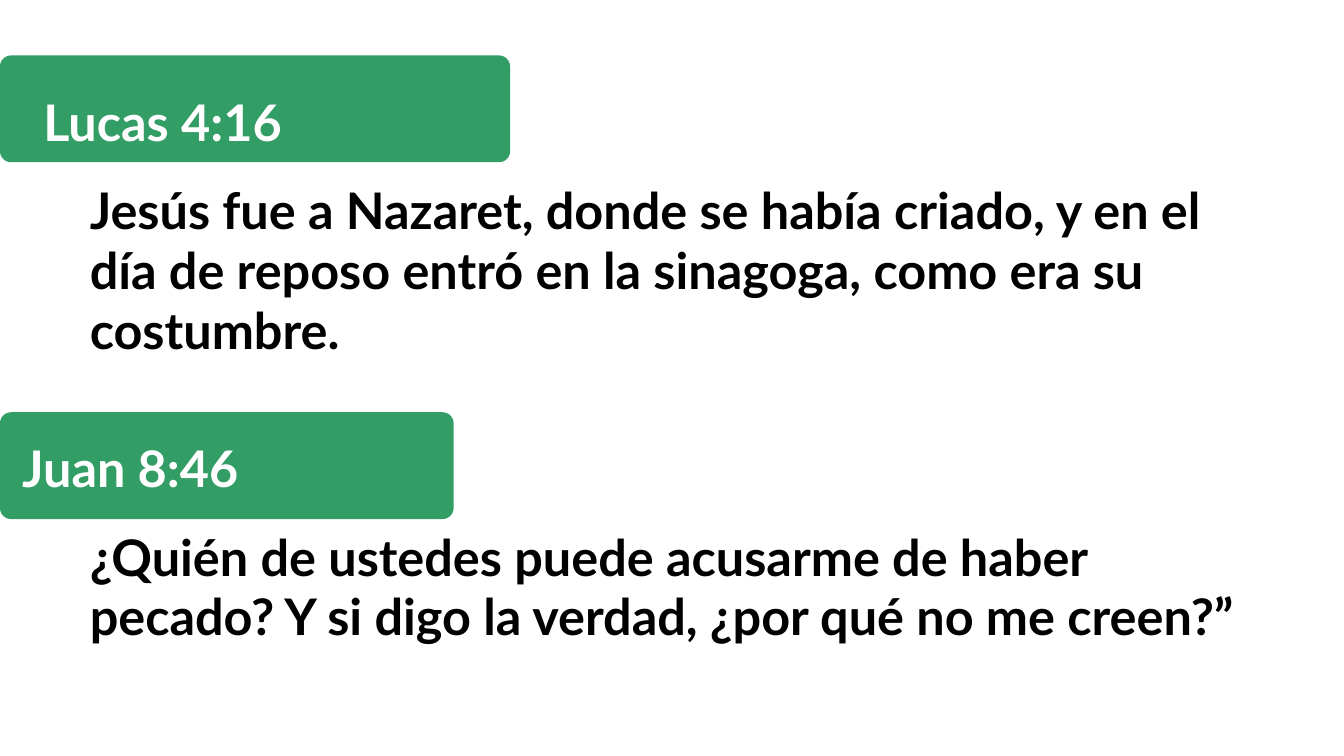
"""Build a slide with two Bible verses under green reference banners."""
from dataclasses import dataclass

import pptx
import pptx.dml.color
import pptx.enum.shapes
import pptx.enum.text
import pptx.oxml.ns
import pptx.util
from lxml import etree
from pptx.util import Inches


@dataclass(frozen=True)
class Theme:
    font: str = "Lato"
    size: int = 36
    banner: str = "008540"
    banner_opacity: int = 80
    reference: str = "FFFFFF"
    verse: str = "000000"


THEME = Theme()


def rgb(value):
    return pptx.dml.color.RGBColor.from_string(value)


def add_banner(s, top, width):
    height, radius = 1.06, 0.11
    sp = s.shapes.add_shape(
        pptx.enum.shapes.MSO_SHAPE.ROUNDED_RECTANGLE,
        Inches(0), Inches(top), Inches(width), Inches(height))
    sp.adjustments[0] = radius / height
    sp.shadow.inherit = False
    sp.line.fill.background()
    sp.fill.solid()
    sp.fill.fore_color.rgb = rgb(THEME.banner)
    qn = pptx.oxml.ns.qn
    color = sp.fill._xPr.find(qn("a:solidFill")).find(qn("a:srgbClr"))
    etree.SubElement(color, qn("a:alpha"), val=str(THEME.banner_opacity * 1000))


def add_text(s, text, left, top, width, height, color, spacing):
    sp = s.shapes.add_textbox(
        Inches(left), Inches(top), Inches(width), Inches(height))
    tf = sp.text_frame
    tf.word_wrap = True
    tf.auto_size = pptx.enum.text.MSO_AUTO_SIZE.NONE
    tf.margin_left = tf.margin_top = tf.margin_right = tf.margin_bottom = 0
    p = tf.paragraphs[0]
    p.line_spacing = spacing
    r = p.add_run()
    r.text = text
    r.font.name = THEME.font
    r.font.size = pptx.util.Pt(THEME.size)
    r.font.bold = True
    r.font.color.rgb = rgb(color)


def add_reference(s, text, left, top, width):
    add_text(s, text, left, top, width, 0.85, THEME.reference, 1.4)


def add_verse(s, text, top):
    add_text(s, text, 0.89, top, 11.55, 2.1, THEME.verse, 0.99)


def main():
    prs = pptx.Presentation()
    prs.slide_width, prs.slide_height = Inches(13.33), Inches(7.5)
    s = prs.slides.add_slide(prs.slide_layouts.get_by_name("Blank"))

    add_banner(s, 0.55, 5.06)
    add_reference(s, "Lucas 4:16", 0.43, 0.66, 5.67)
    add_verse(s, "Jesús fue a Nazaret, donde se había criado, y en el día de "
                 "reposo entró en la sinagoga, como era su costumbre.", 1.8)

    add_banner(s, 4.09, 4.5)
    add_reference(s, "Juan 8:46", 0.22, 4.1, 6.1)
    add_verse(s, "¿Quién de ustedes puede acusarme de haber pecado? "
                 "Y si digo la verdad, ¿por qué no me creen?”", 5.24)

    prs.save("out.pptx")


if __name__ == "__main__":
    main()
